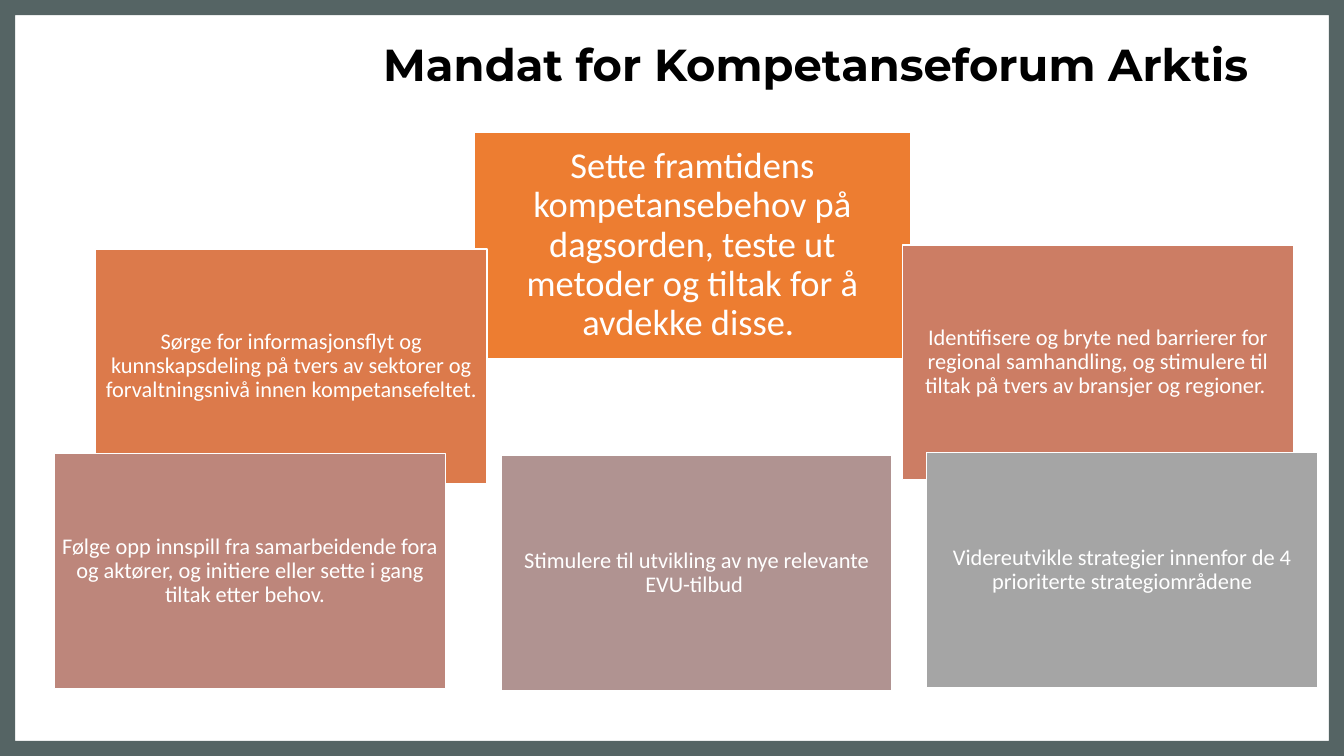
from pptx import Presentation
from pptx.dml.color import RGBColor
from pptx.enum.shapes import MSO_SHAPE as SHAPE
from pptx.enum.text import MSO_ANCHOR as ANCHOR, PP_ALIGN as ALIGN
from pptx.util import Inches, Pt

WIDTH, HEIGHT = Inches(13.33), Inches(7.5)
BLACK = RGBColor(0x00, 0x00, 0x00)
WHITE = RGBColor(0xFF, 0xFF, 0xFF)
SLATE = RGBColor(0x55, 0x64, 0x64)
ORANGE = RGBColor(0xED, 0x7D, 0x31)
COPPER = RGBColor(0xDC, 0x7A, 0x4B)
TERRACOTTA = RGBColor(0xCC, 0x7D, 0x64)
ROSE = RGBColor(0xBD, 0x86, 0x7B)
MAUVE = RGBColor(0xB0, 0x93, 0x91)
GREY = RGBColor(0xA5, 0xA5, 0xA5)

# Sizes and places are percentages of the slide's width and height
MAIN_SIZE = (32.4, 30)
TASK_SIZE = (29.11, 31.07)
TASKS = [
    (7.13, 32.93, COPPER, "Sørge for informasjonsflyt og kunnskapsdeling på tvers "
     "av sektorer og forvaltningsnivå innen kompetansefeltet."),
    (67.14, 32.4, TERRACOTTA, "Identifisere og bryte ned barrierer for regional "
     "samhandling, og stimulere til tiltak på tvers av bransjer og regioner. "),
    (4.05, 60, ROSE, "Følge opp innspill fra samarbeidende fora og aktører, "
     "og initiere eller sette i gang tiltak etter behov.  "),
    (37.28, 60.27, MAUVE, "Stimulere til utvikling av nye relevante EVU-tilbud "),
    (68.94, 59.87, GREY, "Videreutvikle strategier innenfor de 4 "
     "prioriterte strategiområdene"),
]


def area(left, top, width, height):
    return (int(WIDTH * left / 100), int(HEIGHT * top / 100),
            int(WIDTH * width / 100), int(HEIGHT * height / 100))


def style_run(p, font, size, color, bold=False):
    f = p.runs[0].font
    f.name, f.size, f.bold = font, Pt(size), bold
    f.color.rgb = color


def add_title(s, text):
    title = s.shapes.title
    title.left, title.top, title.width, title.height = area(27.76, 4.13, 69.24, 8.67)
    tf = title.text_frame
    tf.text = text
    tf.word_wrap = True
    tf.vertical_anchor = ANCHOR.TOP
    p = tf.paragraphs[0]
    p.alignment = ALIGN.LEFT
    p.line_spacing = Pt(39)
    style_run(p, "Montserrat", 32, BLACK, bold=True)


def add_frame(s):
    frame = s.shapes.add_shape(SHAPE.FRAME, 0, 0, WIDTH, HEIGHT)
    frame.adjustments[0] = 0.02
    frame.shadow.inherit = False
    frame.fill.solid()
    frame.fill.fore_color.rgb = SLATE
    frame.line.fill.background()


def add_box(s, left, top, box_size, color, text, size, inset):
    sp = s.shapes.add_shape(SHAPE.RECTANGLE, *area(left, top, *box_size))
    sp.shadow.inherit = False
    sp.fill.solid()
    sp.fill.fore_color.rgb = color
    sp.line.color.rgb = WHITE
    sp.line.width = Pt(1)
    tf = sp.text_frame
    tf.text = text
    tf.word_wrap = True
    tf.vertical_anchor = ANCHOR.MIDDLE
    tf.margin_left = tf.margin_right = Inches(inset)
    tf.margin_top = tf.margin_bottom = Inches(inset)
    p = tf.paragraphs[0]
    p.alignment = ALIGN.CENTER
    p.line_spacing = 0.9
    style_run(p, "Calibri", size, WHITE)


def main():
    prs = Presentation()
    prs.slide_width, prs.slide_height = WIDTH, HEIGHT
    s = prs.slides.add_slide(prs.slide_layouts[5])

    # Border and heading
    add_frame(s)
    add_title(s, "Mandat for Kompetanseforum Arktis")

    # Main mandate, then the tasks overlapping it
    add_box(s, 35.33, 17.47, MAIN_SIZE, ORANGE,
            "Sette framtidens kompetansebehov på dagsorden, teste ut metoder "
            "og tiltak for å avdekke disse. ", 26, 0.11)
    for left, top, color, text in TASKS:
        add_box(s, left, top, TASK_SIZE, color, text, 16, 0.07)

    prs.save("out.pptx")


if __name__ == "__main__":
    main()
